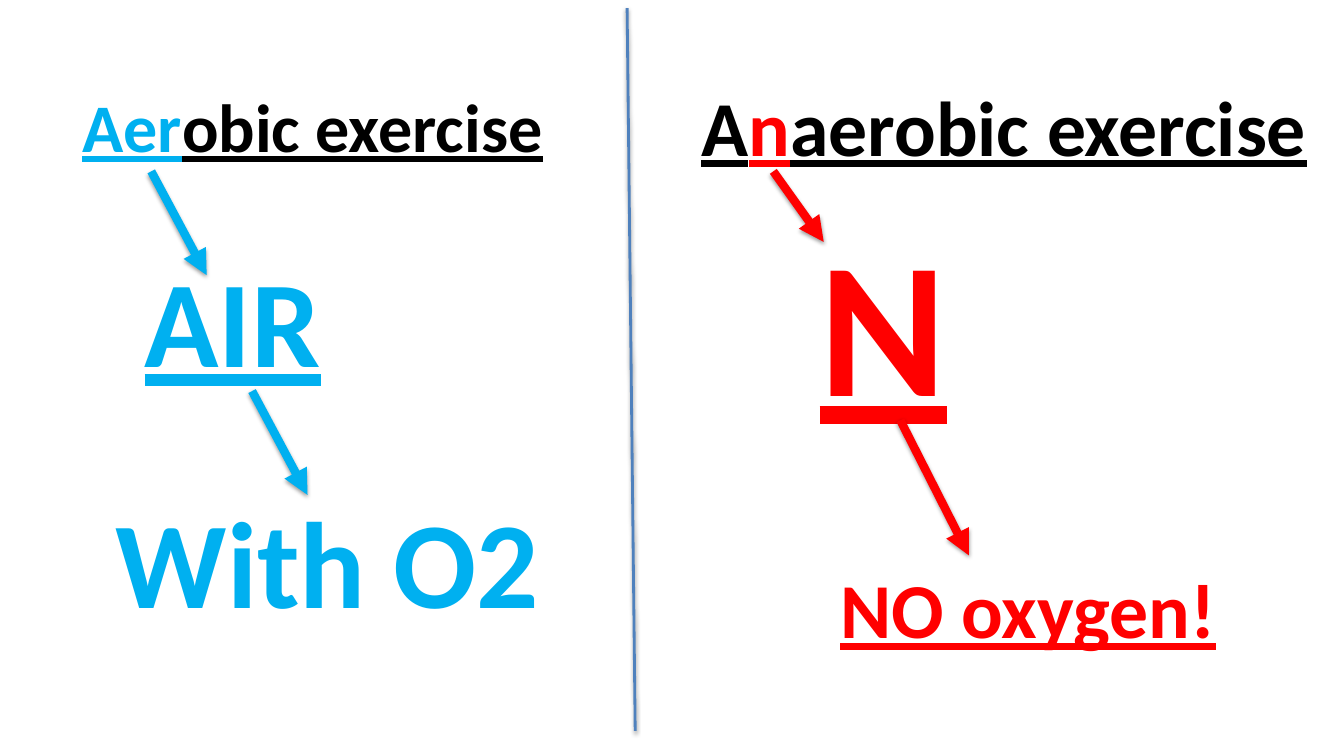
"""Builds a slide contrasting aerobic and anaerobic exercise."""
import pptx
import pptx.util
import pptx.dml.color
import pptx.enum.dml
import pptx.enum.text
import pptx.oxml
import pptx.oxml.ns

COLORS = {"air": "00B0F0", "none": "FF0000", "ink": "000000", "divider": "4F81BD"}

HEADING = {"runs": [("Aer", "air"), ("obic exercise", "ink")],
           "box": (3.1, 0.78, 6, 0.92), "size": 48.6, "underline": True}
WORDS = [
    {"runs": [("A", "ink"), ("n", "none"), ("aerobic exercise", "ink")],
     "box": (9.96, 0.78, 6.6, 0.92), "size": 55.5, "underline": True},
    {"runs": [("AIR", "air")],
     "box": (2.31, 2.15, 4.5, 2.02), "size": 87.8, "underline": True},
    {"runs": [("N", "none")],
     "box": (8.76, 2.07, 4.5, 2.19), "size": 138, "underline": True},
    {"runs": [("NO oxygen!", "none")],
     "box": (10.2, 5.57, 6, 0.92), "size": 55.5, "underline": True},
    {"runs": [("With O2", "air")],
     "box": (3.25, 4.54, 6, 2.02), "size": 87.8, "underline": False},
]
DIVIDER = ((6.22, 0.08), (6.3, 7.25))
ARROWS = [
    ((1.5, 1.7), (2.05, 2.73), "air"),
    ((7.67, 1.7), (8.17, 2.4), "none"),
    ((2.5, 3.88), (3.05, 4.91), "air"),
    ((8.93, 4.17), (9.61, 5.51), "none"),
]


def rgb(name):
    return pptx.dml.color.RGBColor.from_string(COLORS[name])


def write(shape, word):
    """Place the shape around its centre and fill it with formatted runs."""
    center, top, width, height = word["box"]
    shape.left = pptx.util.Inches(center - width / 2)
    shape.top = pptx.util.Inches(top)
    shape.width = pptx.util.Inches(width)
    shape.height = pptx.util.Inches(height)
    frame = shape.text_frame
    frame.word_wrap = True
    frame.auto_size = pptx.enum.text.MSO_AUTO_SIZE.NONE
    frame.vertical_anchor = pptx.enum.text.MSO_ANCHOR.MIDDLE
    paragraph = frame.paragraphs[0]
    paragraph.alignment = pptx.enum.text.PP_ALIGN.CENTER
    for text, color in word["runs"]:
        run = paragraph.add_run()
        run.text = text
        run.font.name = "Calibri"
        run.font.size = pptx.util.Pt(word["size"])
        run.font.bold = True
        run.font.underline = word["underline"]
        run.font.color.rgb = rgb(color)


def draw_line(slide, start, end, color, width, arrow=False):
    """Draw a softly shadowed line, with an arrowhead at its end if asked."""
    ends = [pptx.util.Inches(value) for value in (*start, *end)]
    line = slide.shapes.add_connector(pptx.enum.shapes.MSO_CONNECTOR.STRAIGHT, *ends)
    line.line.color.rgb = rgb(color)
    line.line.width = pptx.util.Pt(width)
    namespace = pptx.oxml.ns.nsdecls("a")
    if arrow:
        line.line._get_or_add_ln().append(
            pptx.oxml.parse_xml(f'<a:tailEnd {namespace} type="triangle"/>'))
    blur, distance = pptx.util.Pt(3.1), pptx.util.Pt(1.6)
    line._element.spPr.append(pptx.oxml.parse_xml(
        f'<a:effectLst {namespace}><a:outerShdw blurRad="{blur}" dist="{distance}" '
        f'dir="5400000" rotWithShape="0"><a:srgbClr val="{COLORS["ink"]}">'
        '<a:alpha val="38000"/></a:srgbClr></a:outerShdw></a:effectLst>'))


def main():
    deck = pptx.Presentation()
    deck.slide_width = pptx.util.Inches(13.33)
    deck.slide_height = pptx.util.Inches(7.5)
    slide = deck.slides.add_slide(deck.slide_layouts.get_by_name("Title Only"))
    write(slide.shapes.title, HEADING)
    for word in WORDS:
        write(slide.shapes.add_textbox(0, 0, 0, 0), word)
    draw_line(slide, *DIVIDER, "divider", 2)
    for start, end, color in ARROWS:
        draw_line(slide, start, end, color, 6, arrow=True)
    deck.save("out.pptx")


if __name__ == "__main__":
    main()
